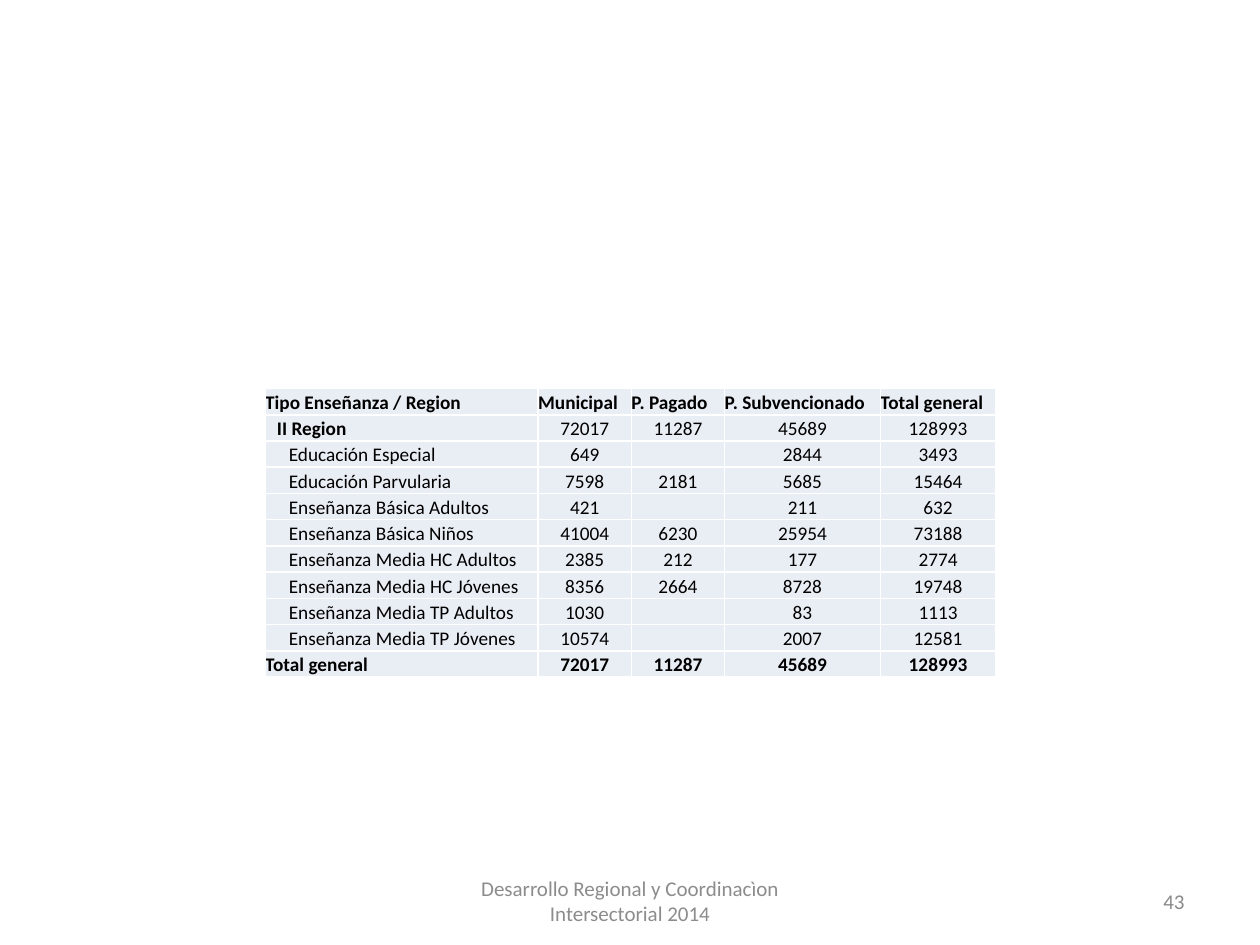
from lxml.etree import SubElement
from pptx import Presentation
from pptx.dml.color import RGBColor
from pptx.enum.text import MSO_ANCHOR as Anchor, PP_ALIGN as Align
from pptx.oxml.ns import qn
from pptx.util import Pt

BLACK = RGBColor(0x00, 0x00, 0x00)
WHITE = RGBColor(0xFF, 0xFF, 0xFF)
CELL_FILL = RGBColor(0xE9, 0xED, 0xF4)
FOOTER_GRAY = RGBColor(0x8C, 0x8C, 0x8C)
NUMBER_GRAY = RGBColor(0x89, 0x89, 0x89)

FONT = "Calibri"
HEADERS = ["Tipo Enseñanza / Region", "Municipal", "P. Pagado",
           "P. Subvencionado", "Total general"]
ENROLMENT = [
    ("II Region", 72017, 11287, 45689, 128993),
    ("Educación Especial", 649, "", 2844, 3493),
    ("Educación Parvularia", 7598, 2181, 5685, 15464),
    ("Enseñanza Básica Adultos", 421, "", 211, 632),
    ("Enseñanza Básica Niños", 41004, 6230, 25954, 73188),
    ("Enseñanza Media HC Adultos", 2385, 212, 177, 2774),
    ("Enseñanza Media HC Jóvenes", 8356, 2664, 8728, 19748),
    ("Enseñanza Media TP Adultos", 1030, "", 83, 1113),
    ("Enseñanza Media TP Jóvenes", 10574, "", 2007, 12581),
    ("Total general", 72017, 11287, 45689, 128993),
]
COLUMN_WIDTHS = [156, 53.3, 53.3, 89, 66]
ROW_HEIGHT = 15
REGION_INDENT, LEVEL_INDENT = 6.75, 13.5


def write_text(frame, text, size=12, color=BLACK, bold=False, align=Align.LEFT):
    paragraph = frame.paragraphs[0]
    paragraph.alignment = align
    if not text:
        # The end mark keeps an empty cell from growing to the default size.
        SubElement(paragraph._p, qn("a:endParaRPr"), sz=str(size * 100))
        return
    run = paragraph.add_run()
    run.text = text
    font = run.font
    font.name, font.size, font.bold = FONT, Pt(size), bold
    font.color.rgb = color


def add_borders(cell, color, width):
    properties = cell._tc.get_or_add_tcPr()
    for side in ("a:lnL", "a:lnR", "a:lnT", "a:lnB"):
        line = SubElement(properties, qn(side), w=str(Pt(width)))
        SubElement(SubElement(line, qn("a:solidFill")), qn("a:srgbClr"), val=str(color))


class SlideBuilder:
    """Holds the current slide and the look of its elements."""

    def __init__(self, slide, cell_fill=CELL_FILL, border=WHITE):
        self.slide = slide
        self.cell_fill = cell_fill
        self.border = border

    def text(self, text, left, top, width, height, **style):
        box = self.slide.shapes.add_textbox(Pt(left), Pt(top), Pt(width), Pt(height))
        frame = box.text_frame
        frame.word_wrap = True
        frame.vertical_anchor = Anchor.MIDDLE
        write_text(frame, text, **style)

    def cell(self, cell, text, indent=0, **style):
        cell.margin_left = Pt(indent)
        cell.margin_right = cell.margin_top = cell.margin_bottom = 0
        cell.vertical_anchor = Anchor.BOTTOM
        add_borders(cell, self.border, 1)
        cell.fill.solid()
        cell.fill.fore_color.rgb = self.cell_fill
        write_text(cell.text_frame, text, size=11, **style)

    def table(self, rows, left, top, widths, row_height):
        """Bold header and total rows; the first column is indented by level."""
        table = self.slide.shapes.add_table(
            len(rows), len(widths), Pt(left), Pt(top),
            Pt(sum(widths)), Pt(row_height * len(rows))).table
        for column, width in zip(table.columns, widths):
            column.width = Pt(width)
        last = len(rows) - 1
        indents = {0: 0, 1: REGION_INDENT, last: 0}
        for r, values in enumerate(rows):
            table.rows[r].height = Pt(row_height)
            for c, value in enumerate(values):
                is_label = c == 0
                self.cell(
                    table.cell(r, c), str(value),
                    indent=indents.get(r, LEVEL_INDENT) if is_label else 0,
                    bold=r in (0, last) or (r == 1 and is_label),
                    align=Align.LEFT if is_label or r == 0 else Align.CENTER)


def main():
    deck = Presentation()
    deck.slide_width, deck.slide_height = Pt(720), Pt(540)
    builder = SlideBuilder(deck.slides.add_slide(deck.slide_layouts[6]))
    builder.table([HEADERS, *ENROLMENT], 151.5, 222, COLUMN_WIDTHS, ROW_HEIGHT)
    builder.text("Desarrollo Regional y Coordinacìon Intersectorial 2014",
                 246, 500.5, 228, 28.75, color=FOOTER_GRAY, align=Align.CENTER)
    builder.text("43", 516, 500.5, 168, 28.75, color=NUMBER_GRAY, align=Align.RIGHT)
    deck.save("out.pptx")


if __name__ == "__main__":
    main()
